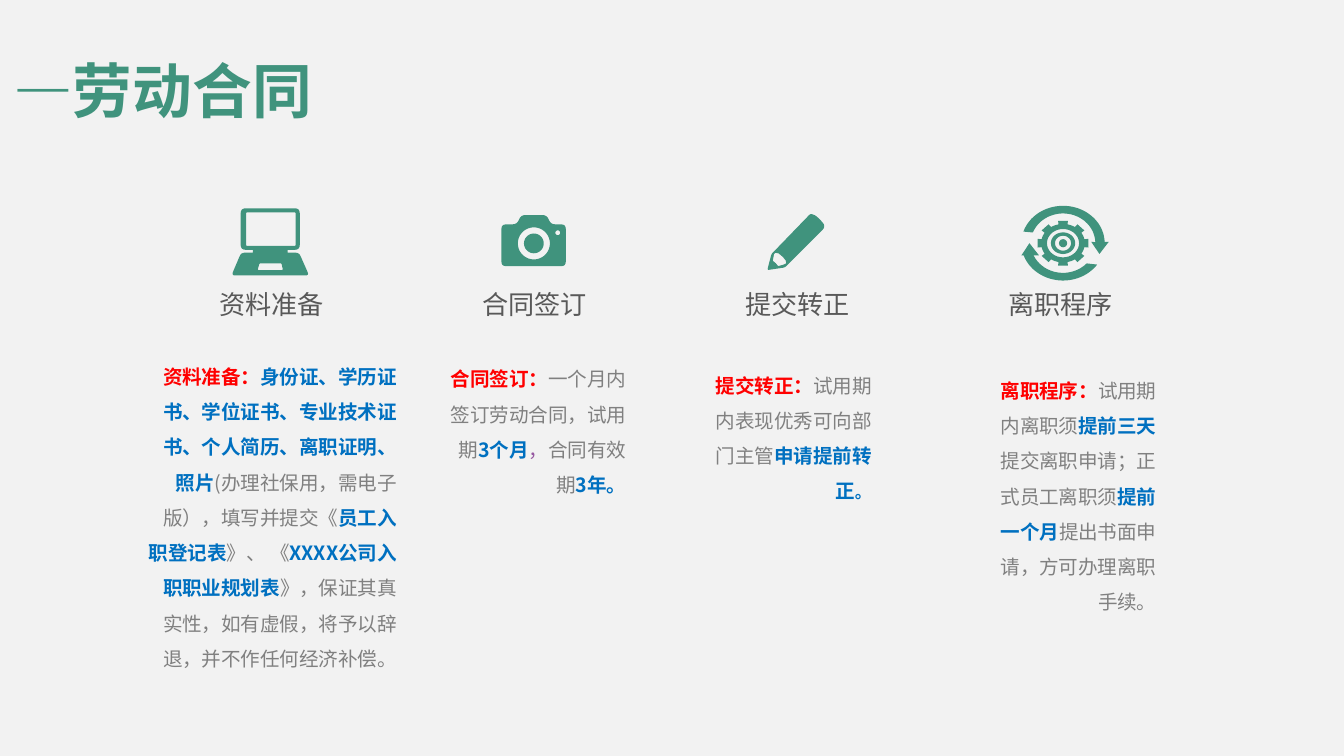
from math import cos, radians, sin
from lxml.etree import SubElement
from pptx import Presentation
from pptx.dml.color import RGBColor
from pptx.enum.shapes import MSO_SHAPE
from pptx.enum.text import PP_ALIGN
from pptx.oxml.ns import qn
from pptx.util import Pt

GREEN, RED, BLUE = "40937D", "FF0000", "0070C0"
GRAY, DARK, PURPLE = "808080", "595959", "9658A1"
CHINESE_FONT = "Noto Sans CJK SC"
UNITS_PER_POINT = 100


def color(value):
    return RGBColor.from_string(value)


def add_run(paragraph, text, size=10.5, font=CHINESE_FONT, fill=GRAY, bold=False):
    run = paragraph.add_run()
    run.text = text
    run.font.size = Pt(size)
    run.font.name = font
    run.font.bold = bold
    run.font.color.rgb = color(fill)
    east_asian = SubElement(run.font._element, qn("a:ea"))
    east_asian.set("typeface", CHINESE_FONT)


def arc(center, radius_x, radius_y, start=0, end=360, steps=36):
    angles = [radians(start + (end - start) * step / steps) for step in range(steps + 1)]
    return [(center[0] + radius_x * cos(angle), center[1] + radius_y * sin(angle)) for angle in angles]


def box(left, top, right, bottom):
    return [(left, top), (right, top), (right, bottom), (left, bottom)]


def rounded(corners, radius):
    points = []
    for index, (x, y) in enumerate(corners):
        ends = []
        for other_x, other_y in (corners[index - 1], corners[(index + 1) % len(corners)]):
            length = ((other_x - x) ** 2 + (other_y - y) ** 2) ** 0.5
            share = min(radius / length, 0.5)
            ends.append((x + (other_x - x) * share, y + (other_y - y) * share))
        for step in range(5):
            t = step / 4
            weights = (1 - t) ** 2, 2 * t * (1 - t), t ** 2
            curve = ends[0], (x, y), ends[1]
            points.append(tuple(sum(w * p[axis] for w, p in zip(weights, curve)) for axis in (0, 1)))
    return points


class SlideBuilder:
    def __init__(self, presentation, background, accent):
        self.slide = presentation.slides.add_slide(presentation.slide_layouts[6])
        self.slide.background.fill.solid()
        self.slide.background.fill.fore_color.rgb = color(background)
        self.accent = accent

    def paint(self, shape):
        shape.shadow.inherit = False
        shape.fill.solid()
        shape.fill.fore_color.rgb = color(self.accent)
        shape.line.fill.background()

    def outline(self, *contours, parent=None):
        shapes = (parent or self.slide).shapes
        scaled = [[(x * UNITS_PER_POINT, y * UNITS_PER_POINT) for x, y in contour] for contour in contours]
        builder = shapes.build_freeform(*scaled[0][0], scale=Pt(1) / UNITS_PER_POINT)
        builder.add_line_segments(scaled[0][1:], close=True)
        for contour in scaled[1:]:
            builder.move_to(*contour[0])
            builder.add_line_segments(contour[1:], close=True)
        self.paint(builder.convert_to_shape())

    def dot(self, center, radius, parent):
        left, top = center[0] - radius, center[1] - radius
        self.paint(parent.shapes.add_shape(
            MSO_SHAPE.OVAL, Pt(left), Pt(top), Pt(2 * radius), Pt(2 * radius)))

    def text(self, place, runs, margins=(0, 0, 0, 0), align=PP_ALIGN.LEFT, spacing=1):
        frame = self.slide.shapes.add_textbox(*map(Pt, place)).text_frame
        frame.word_wrap = True
        frame.margin_left, frame.margin_top, frame.margin_right, frame.margin_bottom = map(Pt, margins)
        paragraph = frame.paragraphs[0]
        paragraph.alignment = align
        paragraph.line_spacing = spacing
        paragraph._p.get_or_add_pPr().set("hangingPunct", "0")
        for text, style in runs:
            add_run(paragraph, text, **style)


def draw_laptop(builder):
    lid = rounded(box(128.9, 111.6, 160.6, 133.9), 2.8)
    screen = rounded(box(131.8, 113.8, 158.4, 131.8), 0.7)
    hinge = box(135.4, 133.9, 154.1, 135.4)
    base = rounded([(129.2, 135.4), (160.2, 135.4), (165.6, 147.6), (124, 147.6)], 2)
    touchpad = rounded([(139, 141.1), (150.8, 141.1), (151.6, 144.7), (138, 144.7)], 0.6)
    builder.outline(lid, screen, hinge, base, touchpad)


def draw_camera(builder):
    body = rounded([(268.6, 120.2), (277, 120.2), (279, 115.2), (293, 115.2),
                    (295, 120.2), (303.1, 120.2), (303.1, 142.6), (268.6, 142.6)], 2.5)
    lens = (286, 130.4)
    builder.outline(body, arc(lens, 8.6, 8.6), arc(lens, 5.3, 5.3), arc((298.8, 124.7), 1.3, 1.3))


def draw_pencil(builder):
    body = [(439.2, 117.4), (436.5, 115.2), (434.2, 114.5), (413.3, 136.1), (411.1, 144.7),
            (420.5, 143.3), (441.4, 122.4), (441.7, 120.5)]
    tip = [(419.8, 141.8), (416.9, 142.6), (415.6, 141), (414, 139.7), (414.7, 136.1),
           (415.4, 135.4), (417.2, 135.8), (419.4, 137.6), (421, 139.6), (421.2, 141.1)]
    builder.outline(rounded(body, 1), tip)


def draw_gear(builder):
    center = (569.5, 130.3)
    group = builder.slide.shapes.add_group_shape()
    upper_head = [(594, 129.6), (589, 136.1), (584.6, 129.6)]
    builder.outline(arc(center, 22.3, 20, 198, 358) + upper_head
                    + arc(center, 17.3, 15.9, 358, 201), parent=group)
    lower_head = [(556.6, 136.8), (551.5, 130.3), (547.2, 136.8)]
    builder.outline(arc(center, 17.3, 15.9, 43, 156) + lower_head
                    + arc(center, 22.3, 20, 161, 35), parent=group)
    teeth = []
    for angle in range(0, 360, 45):
        teeth += arc(center, 11.7, 10.3, angle - 12, angle - 12, 1)
        teeth += arc(center, 13.8, 12.2, angle - 11, angle + 11, 1)
        teeth += arc(center, 11.7, 10.3, angle + 12, angle + 33, 4)
    builder.outline(teeth, arc(center, 8.6, 7.6), parent=group)
    builder.outline(arc(center, 6.5, 5.8), arc(center, 4.3, 4), parent=group)
    builder.dot(center, 2.2, group)


def plain(text, fill=GRAY):
    return text, {"fill": fill}


def strong(text, fill=BLUE, size=10.5):
    return text, {"fill": fill, "bold": True, "size": size}


COLUMNS = [
    ("资料准备", 22.3, (77.2, 189.2, 135.4, 86.4), [
        strong("身份证、学历证书、学位证书、专业技术证书、个人简历、离职证明、照片"),
        plain("(办理社保用，需电子版），填写并提交《"), strong("员工入职登记表"), plain("》、 《"),
        strong("XXXX公司入职职业规划表"),
        plain("》，保证其真实性，如有虚假，将予以辞退，并不作任何经济补偿。")]),
    ("合同签订", 22.3, (236.9, 190.5, 98.6, 85.7), [
        plain("一个月内签订劳动合同，试用期"), strong("3个月"), plain("，", PURPLE),
        plain("合同有效期"), strong("3年。")]),
    ("提交转正", 40.3, (381.3, 193.9, 85.7, 86.4), [
        plain("试用期内表现优秀可向部门主管"), strong("申请提前转正"), strong("。", size=9)]),
    ("离职程序", 22.3, (532.4, 196.6, 87.1, 34.6), [
        plain("试用期内离职须"), strong("提前三天"), plain("提交离职申请；正式员工离职须"),
        strong("提前一个月"), plain("提出书面申请，方可办理离职手续。")]),
]


def main():
    presentation = Presentation()
    presentation.slide_width, presentation.slide_height = Pt(720), Pt(405)
    builder = SlideBuilder(presentation, "F2F2F2", GREEN)
    for draw_icon in (draw_camera, draw_pencil, draw_laptop):
        draw_icon(builder)
    for index, (heading, height, place, runs) in enumerate(COLUMNS):
        builder.text((99.4 + 140.9 * index, 151.6, 90.7, height),
                     [(heading, {"size": 14, "font": "Calibri", "fill": DARK})],
                     margins=(18.1, 2.7, 5, 2.7))
        builder.text(place, [strong(heading + "：", RED)] + runs, align=PP_ALIGN.RIGHT, spacing=1.5)
    draw_gear(builder)
    builder.text((0, 25.2, 224.6, 46.1), [strong("—劳动合同", GREEN, 32)],
                 margins=(7.2, 3.6, 7.2, 3.6))
    presentation.save("out.pptx")


if __name__ == "__main__":
    main()
